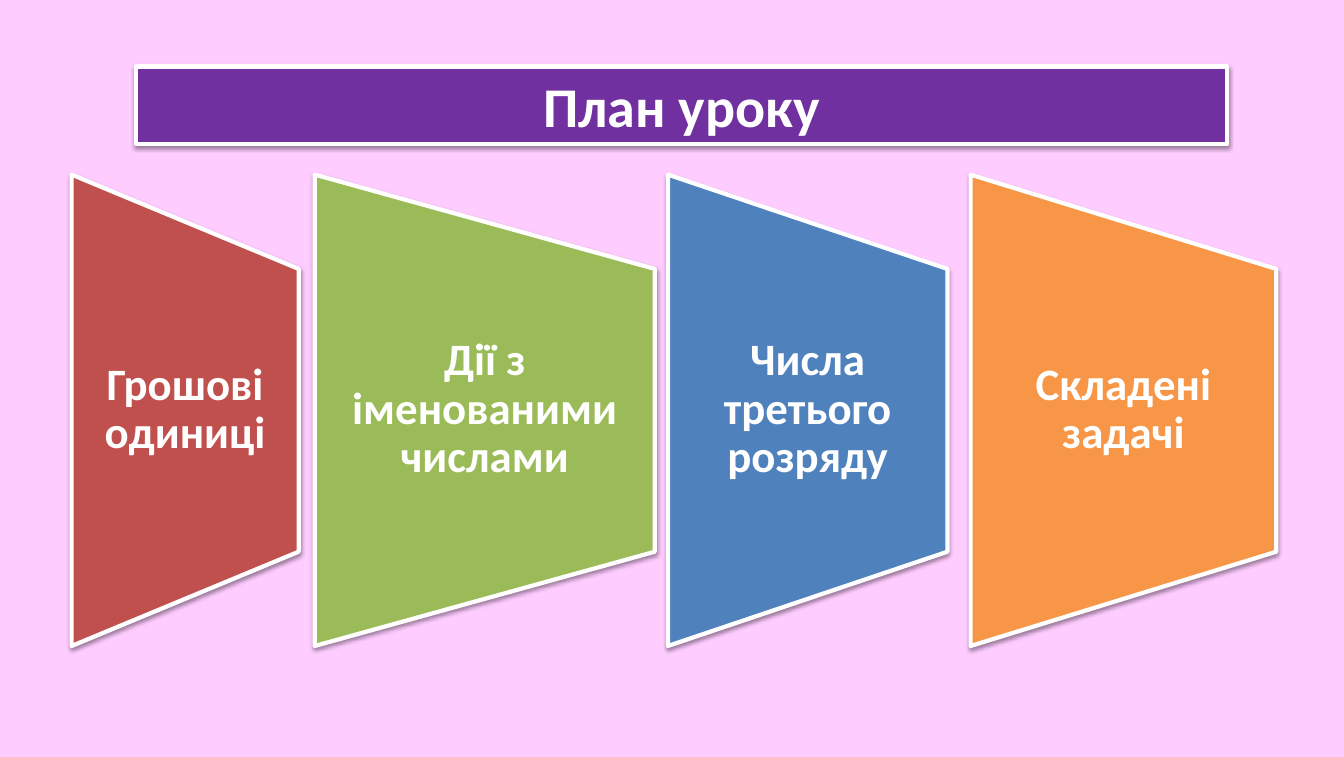
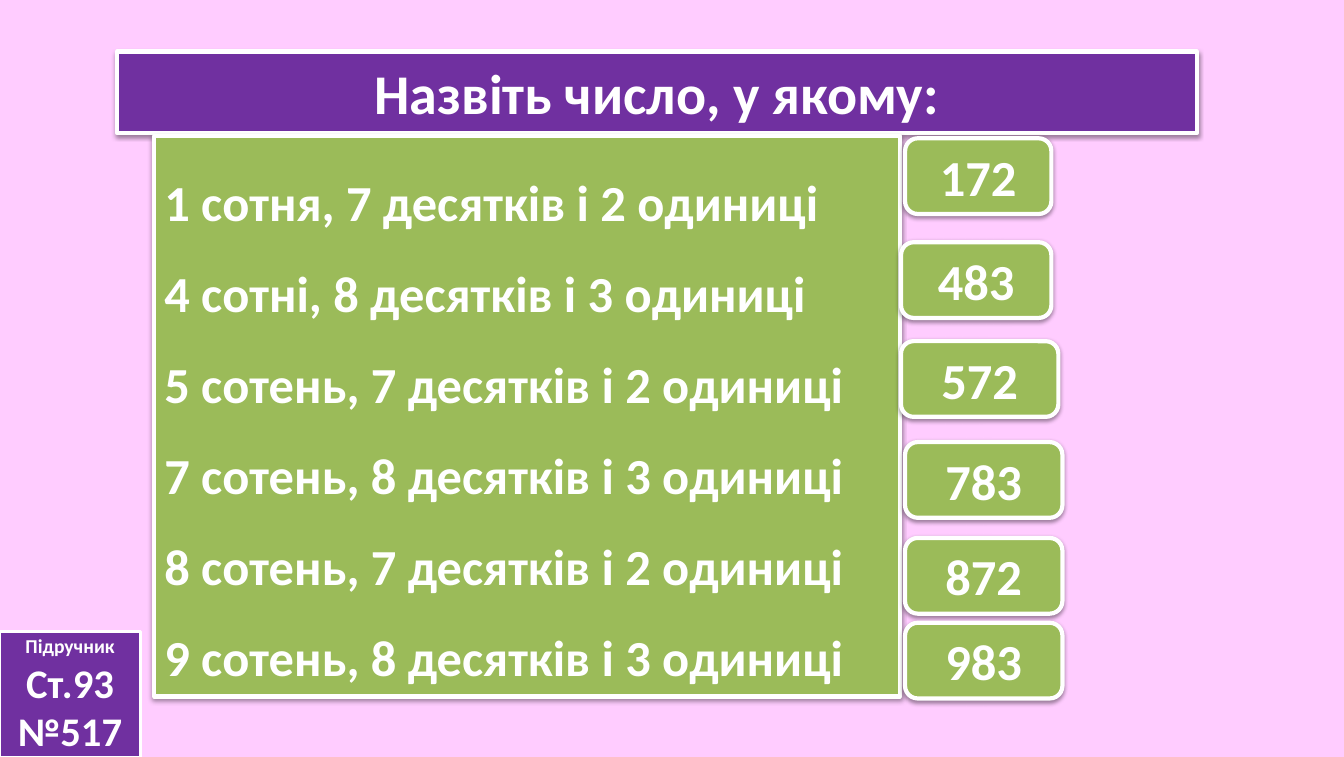
from dataclasses import dataclass
from typing import Any

from lxml import etree
from pptx import Presentation
from pptx.dml.color import RGBColor
from pptx.enum.shapes import MSO_SHAPE
from pptx.enum.text import MSO_ANCHOR, MSO_AUTO_SIZE, PP_ALIGN
from pptx.oxml.ns import qn
from pptx.util import Emu, Pt

PX = 9144
FONT = "Calibri"
PINK = RGBColor(0xFF, 0xCC, 0xFF)
WHITE = RGBColor(0xFF, 0xFF, 0xFF)
PURPLE = RGBColor(0x70, 0x30, 0xA0)
RED = RGBColor(0xC0, 0x50, 0x4D)
GREEN = RGBColor(0x9B, 0xBB, 0x59)
BLUE = RGBColor(0x4F, 0x81, 0xBD)
ORANGE = RGBColor(0xF7, 0x96, 0x46)

RECTANGLE = MSO_SHAPE.RECTANGLE
ROUNDED = MSO_SHAPE.ROUNDED_RECTANGLE
FUNNEL = MSO_SHAPE.FLOWCHART_MANUAL_OPERATION
TOP, MIDDLE = MSO_ANCHOR.TOP, MSO_ANCHOR.MIDDLE
LEFT, CENTER = PP_ALIGN.LEFT, PP_ALIGN.CENTER
NO_FIT = MSO_AUTO_SIZE.NONE
TITLE_ONLY = 5

FUNNEL_TOP, FUNNEL_HEIGHT = 173, 467
LABEL_TOP, LABEL_HEIGHT = 266, 280
ANSWER_HEIGHT = 75


@dataclass(frozen=True)
class Frame:
    left: int
    top: int
    width: int
    height: int

    def emu(self) -> tuple[Emu, ...]:
        return tuple(Emu(value * PX) for value in (self.left, self.top, self.width, self.height))


@dataclass(frozen=True)
class Line:
    text: str
    size: int


@dataclass(frozen=True)
class Topic:
    text: str
    left: int
    width: int
    color: RGBColor


@dataclass(frozen=True)
class Answer:
    text: str
    left: int
    top: int
    width: int


TOPICS = (
    Topic("Складені задачі", 962, 303, ORANGE),
    Topic("Грошові одиниці", 71, 225, RED),
    Topic("Дії з іменованими числами", 312, 337, GREEN),
    Topic("Числа третього розряду", 662, 277, BLUE),
)
QUESTIONS = (
    "1 сотня, 7 десятків і 2 одиниці",
    "4 сотні, 8 десятків і 3 одиниці",
    "5 сотень, 7 десятків і 2 одиниці",
    "7 сотень, 8 десятків і 3 одиниці",
    "8 сотень, 7 десятків і 2 одиниці",
    "9 сотень, 8 десятків і 3 одиниці",
)
ANSWERS = (
    Answer("172", 897, 137, 145),
    Answer("483", 893, 240, 149),
    Answer("572", 893, 338, 156),
    Answer("783", 897, 438, 156),
    Answer("872", 897, 533, 156),
    Answer("983", 897, 617, 156),
)


def apply(target: Any, values: dict[str, Any]) -> None:
    for name, value in values.items():
        setattr(target, name, value)


def paint(shape: Any, color: RGBColor, line_width: int = 3, shadow: bool = True) -> None:
    shape.fill.solid()
    shape.fill.fore_color.rgb = color
    shape.line.color.rgb = WHITE
    shape.line.width = Pt(line_width)
    shape.shadow.inherit = False
    if shadow:
        effects = shape.element.spPr.find(qn("a:effectLst"))
        outer = etree.SubElement(
            effects, qn("a:outerShdw"), blurRad=str(Pt(3.1)), dist=str(Pt(1.6)),
            dir="5400000", rotWithShape="0",
        )
        tint = etree.SubElement(outer, qn("a:srgbClr"), val="000000")
        etree.SubElement(tint, qn("a:alpha"), val="38000")


def write(shape: Any, lines: list[Line], anchor: Any = MIDDLE, align: Any = CENTER,
          spacing: float = 1.0, side: int = 10, edge: int = 5) -> None:
    box = shape.text_frame
    apply(box, {
        "word_wrap": True, "auto_size": NO_FIT, "vertical_anchor": anchor,
        "margin_left": side * PX, "margin_right": side * PX,
        "margin_top": edge * PX, "margin_bottom": edge * PX,
    })
    for index, line in enumerate(lines):
        para = box.add_paragraph() if index else box.paragraphs[0]
        apply(para, {"alignment": align, "line_spacing": spacing})
        span = para.add_run()
        span.text = line.text
        apply(span.font, {"name": FONT, "size": Pt(line.size), "bold": True})
        span.font.color.rgb = WHITE


def add_page(deck: Any, title: str, frame: Frame, anchor: Any) -> Any:
    page = deck.slides.add_slide(deck.slide_layouts[TITLE_ONLY])
    heading = page.shapes.title
    apply(heading, dict(zip(("left", "top", "width", "height"), frame.emu())))
    paint(heading, PURPLE)
    write(heading, [Line(title, 40)], anchor)
    return page


def add_topic(page: Any, topic: Topic) -> None:
    shift = (topic.width - FUNNEL_HEIGHT) // 2
    turned = Frame(topic.left + shift, FUNNEL_TOP - shift, FUNNEL_HEIGHT, topic.width)
    funnel = page.shapes.add_shape(FUNNEL, *turned.emu())
    funnel.rotation = 270
    paint(funnel, topic.color)
    label = page.shapes.add_textbox(
        *Frame(topic.left, LABEL_TOP, topic.width, LABEL_HEIGHT).emu())
    write(label, [Line(topic.text, 32)], spacing=0.9, side=22, edge=0)


def build_plan(deck: Any) -> None:
    page = add_page(deck, "План уроку", Frame(135, 66, 1081, 77), TOP)
    for topic in TOPICS:
        add_topic(page, topic)


def build_numbers(deck: Any) -> None:
    page = add_page(deck, "Назвіть число, у якому:", Frame(116, 51, 1070, 81), MIDDLE)
    panel = page.shapes.add_shape(RECTANGLE, *Frame(153, 135, 739, 555).emu())
    paint(panel, GREEN)
    write(panel, [Line(text, 36) for text in QUESTIONS], TOP, LEFT, 1.5)
    for answer in ANSWERS:
        frame = Frame(answer.left, answer.top, answer.width, ANSWER_HEIGHT)
        button = page.shapes.add_shape(ROUNDED, *frame.emu())
        paint(button, GREEN)
        write(button, [Line(answer.text, 36)])
    textbook = page.shapes.add_shape(RECTANGLE, *Frame(0, 626, 139, 124).emu())
    paint(textbook, PURPLE, 2, False)
    write(textbook, [Line("Підручник", 14), Line("Ст.93 №517", 29)])


def main() -> None:
    deck = Presentation()
    deck.slide_width, deck.slide_height = Emu(1332 * PX), Emu(750 * PX)
    backdrop = deck.slide_master.background.fill
    backdrop.solid()
    backdrop.fore_color.rgb = PINK
    build_plan(deck)
    build_numbers(deck)
    deck.save("out.pptx")


if __name__ == "__main__":
    main()
